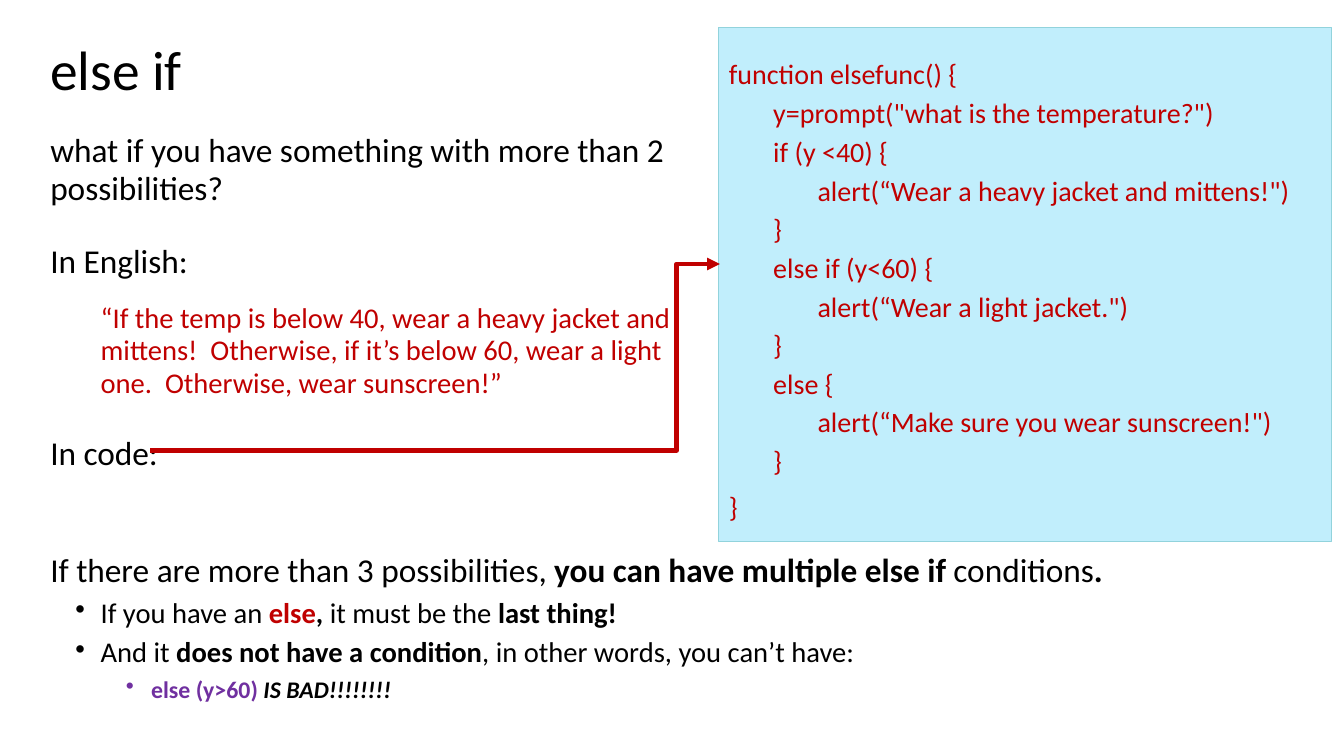
"""Build the slide that explains else if in English and in code."""
from dataclasses import dataclass

from lxml.etree import SubElement
from pptx import Presentation
from pptx.dml.color import RGBColor as Rgb
from pptx.enum.shapes import MSO_CONNECTOR as Link, MSO_SHAPE as Preset
from pptx.enum.text import MSO_ANCHOR as Anchor, PP_ALIGN as Align
from pptx.oxml.ns import qn
from pptx.util import Inches, Pt


@dataclass(frozen=True)
class Theme:
    face: str = "Calibri"
    ink: Rgb = Rgb(0, 0, 0)
    red: Rgb = Rgb(0xC0, 0, 0)
    purple: Rgb = Rgb(0x70, 0x30, 0xA0)
    panel: Rgb = Rgb(0xC1, 0xEE, 0xFC)
    panel_edge: Rgb = Rgb(0x92, 0xD3, 0xDC)
    heading: float = 39.6
    lead: float = 23.8
    detail: float = 20.4
    code: float = 20
    note: float = 17


theme = Theme()
deck = Presentation()
deck.slide_width, deck.slide_height = Inches(13.33), Inches(7.5)
slide = deck.slides.add_slide(deck.slide_layouts[6])
col, row = deck.slide_width / 100, deck.slide_height / 100


def area(left, top, width, height):
    """Turn grid columns and rows into slide lengths."""
    return int(left * col), int(top * row), int(width * col), int(height * row)


def write(frame, index, runs, size, color=theme.ink, spacing=0.95, before=0, after=5,
          indent=0, bullet=False):
    """Write one paragraph from (text, style) runs."""
    line = frame.paragraphs[0] if index == 0 else frame.add_paragraph()
    line.alignment = Align.LEFT
    line.line_spacing = spacing
    line.space_before, line.space_after = Pt(before), Pt(after)
    line.font.name, line.font.size = theme.face, Pt(size)
    line.font.color.rgb = color
    layout = line._p.get_or_add_pPr()
    layout.set("marL", str(Inches(indent)))
    layout.set("indent", str(Inches(-0.25 if bullet else 0)))
    if bullet:
        mark = layout.makeelement(qn("a:buChar"), {"char": "•"})
        layout.find(qn("a:defRPr")).addprevious(mark)
    for text, style in runs:
        run = line.add_run()
        run.text = text
        if "b" in style:
            run.font.bold = True
        if "i" in style:
            run.font.italic = True
        if "r" in style:
            run.font.color.rgb = theme.red
        if "k" in style:
            run.font.color.rgb = theme.ink


heading = slide.shapes.add_textbox(*area(3, 5.33, 90.1, 8.53)).text_frame
heading.word_wrap = True
heading.vertical_anchor = Anchor.MIDDLE
write(heading, 0, [("else if", "")], theme.heading, spacing=0.9, after=0)

english = slide.shapes.add_textbox(*area(3, 16.8, 49.29, 48)).text_frame
english.word_wrap = True
quote = ("“If the temp is below 40, wear a heavy jacket and mittens!  Otherwise, "
         "if it’s below 60, wear a light one.  Otherwise, wear sunscreen!”")
for index, (text, quoted) in enumerate([
    ("what if you have something with more than 2 possibilities?", False),
    ("In English:", False),
    (quote, True),
    ("In code:", False),
]):
    if quoted:
        write(english, index, [(text, "")], theme.detail, theme.red, before=10, indent=0.5)
    else:
        write(english, index, [(text, "")], theme.lead, before=20)

panel = slide.shapes.add_shape(Preset.RECTANGLE, *area(53.49, 3.6, 45.61, 68))
panel.shadow.inherit = False
panel.fill.solid()
panel.fill.fore_color.rgb = theme.panel
panel.line.color.rgb = theme.panel_edge
panel.line.width = Pt(0.75)
code = panel.text_frame
code.word_wrap = True
code.vertical_anchor = Anchor.TOP
code.margin_top = int(4.4 * row)
code_lines = [
    (0, "function elsefunc() {"),
    (1, 'y=prompt("what is the temperature?")'),
    (1, "if (y <40) {"),
    (2, 'alert(“Wear a heavy jacket and mittens!")'),
    (1, "}"),
    (1, "else if (y<60) {"),
    (2, 'alert(“Wear a light jacket.")'),
    (1, "}"),
    (1, "else {"),
    (2, 'alert(“Make sure you wear sunscreen!")'),
    (1, "}"),
    (0, "}"),
]
for index, (depth, text) in enumerate(code_lines):
    write(code, index, [(text, "")], theme.code, theme.red,
          spacing=1.15 if index else 0.9,
          after=5 if index >= len(code_lines) - 2 else 0, indent=0.44 * depth)

rules = slide.shapes.add_textbox(*area(3, 72.4, 95.65, 22.27)).text_frame
rules.word_wrap = True
for index, (size, color, indent, runs) in enumerate([
    (theme.lead, theme.ink, 0, [("If there are more than 3 possibilities, ", ""),
                                ("you can have multiple else if ", "b"),
                                ("conditions", ""), (".", "b")]),
    (theme.detail, theme.ink, 0.5, [("If you have an ", ""), ("else", "br"), (", ", "b"),
                                    ("it must be the ", ""), ("last thing!", "b")]),
    (theme.detail, theme.ink, 0.5, [("And it ", ""), ("does not have a condition", "b"),
                                    (", in other words, you can’t have:", "")]),
    (theme.note, theme.purple, 1, [("else (y>60) ", "b"), ("IS BAD!!!!!!!!", "bik")]),
]):
    write(rules, index, runs, size, color, indent=indent, bullet=indent > 0)

arrow = slide.shapes.add_connector(Link.ELBOW, *area(11.18, 59.6, 53.56, 34.93))
arrow.line.color.rgb = theme.red
arrow.line.width = Pt(3)
SubElement(arrow.line._get_or_add_ln(), qn("a:tailEnd"), type="triangle")
shape_props = arrow._element.spPr
SubElement(shape_props, qn("a:effectLst"))
bend = shape_props.find(qn("a:prstGeom")).find(qn("a:avLst"))
SubElement(bend, qn("a:gd"), name="adj1", fmla="val 92400")

deck.save("out.pptx")
